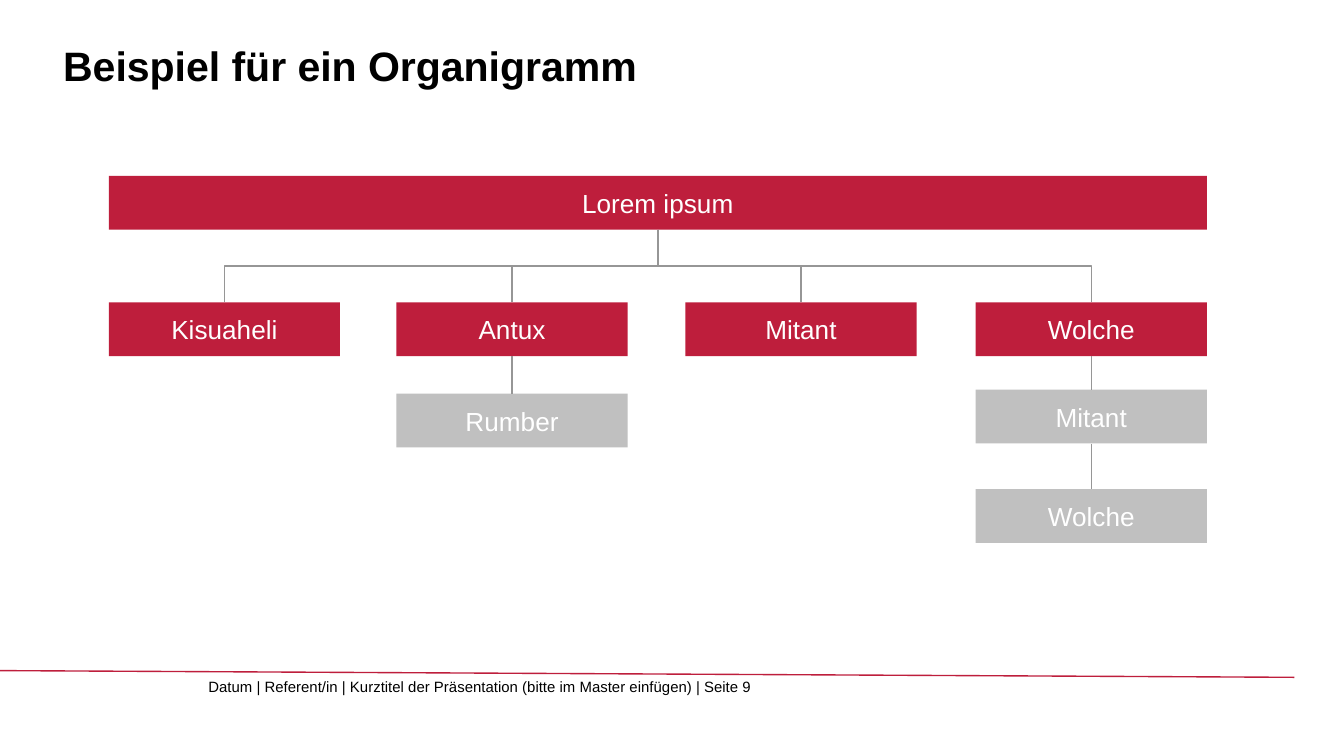
from dataclasses import dataclass

from lxml import etree
from pptx import Presentation
from pptx import util as u
from pptx.dml.color import RGBColor
from pptx.enum import shapes, text
from pptx.oxml.ns import qn

RED = RGBColor(0xBE, 0x1E, 0x3C)
SILVER = RGBColor(0xC0, 0xC0, 0xC0)
GREY = RGBColor(0x96, 0x96, 0x96)
WHITE = RGBColor(0xFF, 0xFF, 0xFF)
BLACK = RGBColor(0x00, 0x00, 0x00)

# Column grid, in inches
COLUMN_LEFTS = (0.81, 2.95, 5.1, 7.26)
BOX_WIDTH, BOX_HEIGHT = 1.72, 0.4


@dataclass(frozen=True)
class Unit:
    name: str
    column: int
    top: float
    fill: RGBColor = RED
    span: int = 1

    @property
    def left(self) -> float:
        return COLUMN_LEFTS[self.column]

    @property
    def width(self) -> float:
        return COLUMN_LEFTS[self.column + self.span - 1] + BOX_WIDTH - self.left

    @property
    def center(self) -> float:
        return self.left + self.width / 2

    @property
    def bottom(self) -> float:
        return self.top + BOX_HEIGHT


HEAD = Unit("Lorem ipsum", 0, 1.31, span=4)
DEPARTMENTS = [Unit(name, column, 2.25) for column, name in
               enumerate(["Kisuaheli", "Antux", "Mitant", "Wolche"])]
# Each chain hangs below the department in its column
CHAINS = [
    [DEPARTMENTS[1], Unit("Rumber", 1, 2.93, SILVER)],
    [DEPARTMENTS[3], Unit("Mitant", 3, 2.9, SILVER), Unit("Wolche", 3, 3.64, SILVER)],
]


def write(shape, words: str, *, size: float, color: RGBColor, bold: bool = False,
          align=text.PP_ALIGN.LEFT, anchor=text.MSO_ANCHOR.TOP,
          fit=text.MSO_AUTO_SIZE.NONE) -> None:
    frame = shape.text_frame
    frame.word_wrap = True
    frame.auto_size = fit
    frame.vertical_anchor = anchor
    frame.margin_left = frame.margin_right = frame.margin_top = frame.margin_bottom = 0
    para = frame.paragraphs[0]
    para.alignment = align
    span = para.add_run()
    span.text = words
    span.font.name = "Arial"
    span.font.size = u.Pt(size)
    span.font.bold = bold
    span.font.color.rgb = color


def draw_unit(page, unit: Unit) -> None:
    box = page.shapes.add_shape(
        shapes.MSO_SHAPE.RECTANGLE,
        *map(u.Inches, (unit.left, unit.top, unit.width, BOX_HEIGHT)))
    box.shadow.inherit = False
    box.fill.solid()
    box.fill.fore_color.rgb = unit.fill
    box.line.fill.background()
    write(box, unit.name, size=14, color=WHITE, align=text.PP_ALIGN.CENTER,
          anchor=text.MSO_ANCHOR.MIDDLE)


def draw_line(page, x1: float, y1: float, x2: float, y2: float,
              color: RGBColor = GREY, kind=shapes.MSO_CONNECTOR.STRAIGHT):
    line = page.shapes.add_connector(kind, *map(u.Inches, (x1, y1, x2, y2)))
    line.line.color.rgb = color
    line.line.width = u.Pt(0.75)
    etree.SubElement(line._element.spPr, qn("a:effectLst"))
    return line


def draw_branch(page, parent: Unit, child: Unit) -> None:
    """Elbow turned by a quarter, so that it leaves and arrives vertically."""
    middle_x = (parent.center + child.center) / 2
    middle_y = (parent.bottom + child.top) / 2
    half_drop = (child.top - parent.bottom) / 2
    half_run = abs(child.center - parent.center) / 2
    to_right = child.center > parent.center
    start = half_drop if to_right else -half_drop
    elbow = draw_line(page, middle_x + start, middle_y - half_run,
                      middle_x - start, middle_y + half_run,
                      kind=shapes.MSO_CONNECTOR.ELBOW)
    degrees = 270 if to_right else 90
    elbow._element.spPr.find(qn("a:xfrm")).set("rot", str(degrees * 60000))


def main() -> None:
    # Widescreen page, 16:9
    deck = Presentation()
    deck.slide_width = u.Inches(10)
    deck.slide_height = u.Inches(10 * 9 / 16)
    page = deck.slides.add_slide(deck.slide_layouts[5])

    # Footer
    draw_line(page, 0, 4.99, 9.63, 5.04, RED)
    footer = page.shapes.add_textbox(*map(u.Inches, (1.55, 5.04, 4.87, 0.27)))
    write(footer,
          "Datum | Referent/in | Kurztitel der Präsentation (bitte im Master einfügen) | Seite 9",
          size=8, color=BLACK, fit=text.MSO_AUTO_SIZE.SHAPE_TO_FIT_TEXT)

    # Title
    title = page.shapes.title
    title.left, title.top, title.width, title.height = map(
        u.Inches, (0.47, 0.09, 9.16, 0.58))
    write(title, "Beispiel für ein Organigramm", size=22, color=BLACK, bold=True,
          anchor=text.MSO_ANCHOR.BOTTOM)

    # Head and departments
    for unit in [HEAD, *DEPARTMENTS]:
        draw_unit(page, unit)
    for department in DEPARTMENTS:
        draw_branch(page, HEAD, department)

    # Teams below the departments
    for chain in CHAINS:
        for parent, child in zip(chain, chain[1:]):
            draw_unit(page, child)
            draw_line(page, parent.center, parent.bottom, child.center, child.top)

    deck.save("out.pptx")


if __name__ == "__main__":
    main()
